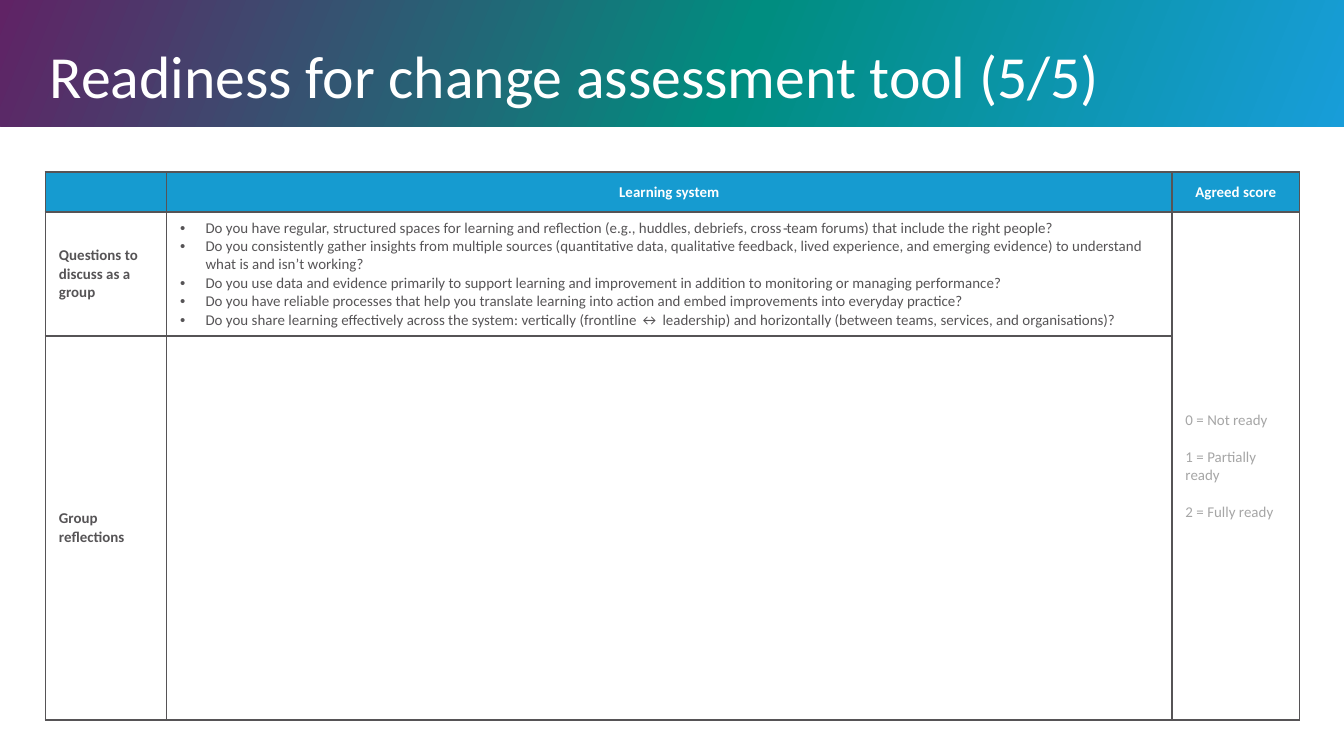
"""Build the learning system page of the readiness for change assessment tool."""
from copy import deepcopy

from lxml import etree
from pptx import Presentation
from pptx.dml import color as dml
from pptx.enum import shapes, text
from pptx.oxml import ns
from pptx.util import Cm, Pt

COLORS = {"purple": "602365", "green": "008D80", "sky": "189DD9", "header": "169BD0",
          "ink": "565456", "hint": "A6A6A6", "white": "FFFFFF"}
QUESTIONS = [
    "Do you have regular, structured spaces for learning and reflection (e.g., huddles, debriefs, cross‑team forums) that include the right people?",
    "Do you consistently gather insights from multiple sources (quantitative data, qualitative feedback, lived experience, and emerging evidence) to understand what is and isn’t working?",
    "Do you use data and evidence primarily to support learning and improvement in addition to monitoring or managing performance?",
    "Do you have reliable processes that help you translate learning into action and embed improvements into everyday practice?",
    "Do you share learning effectively across the system: vertically (frontline ↔ leadership) and horizontally (between teams, services, and organisations)?",
]
SCORES = ["0 = Not ready", "1 = Partially ready", "2 = Fully ready"]


def add_text(paragraph, words, size, color, bold=False):
    run = paragraph.add_run()
    run.text = words
    run.font.name = "Calibri"
    run.font.size = Pt(size)
    run.font.bold = bold
    run.font.color.rgb = dml.RGBColor.from_string(COLORS[color])


def add_borders(cell):
    properties = cell._tc.get_or_add_tcPr()
    for side in ("lnL", "lnR", "lnT", "lnB"):
        line = etree.SubElement(properties, ns.qn(f"a:{side}"), w=str(Pt(1)))
        solid = etree.SubElement(line, ns.qn("a:solidFill"))
        etree.SubElement(solid, ns.qn("a:srgbClr"), val=COLORS["ink"])


deck = Presentation()
deck.slide_width, deck.slide_height = Cm(25.4), Cm(14.29)
slide = deck.slides.add_slide(deck.slide_layouts[5])

band = slide.shapes.add_shape(shapes.MSO_SHAPE.RECTANGLE, 0, 0, deck.slide_width, Cm(2.39))
slide.shapes._spTree.insert(2, band._element)
band.shadow.inherit = False
band.line.fill.background()
band.fill.gradient()
band.fill.gradient_angle = 338
stop_list = band._element.spPr.find(ns.qn("a:gradFill")).find(ns.qn("a:gsLst"))
stop_list.append(deepcopy(stop_list[-1]))
for stop, (position, name) in zip(band.fill.gradient_stops,
                                  [(0, "purple"), (0.55, "green"), (1, "sky")]):
    stop.position = position
    stop.color.rgb = dml.RGBColor.from_string(COLORS[name])

title = slide.shapes.title
title.left, title.top, title.width, title.height = Cm(0.94), Cm(0.89), Cm(23.57), Cm(1.04)
heading = title.text_frame
heading.margin_left = heading.margin_right = heading.margin_top = heading.margin_bottom = 0
heading.vertical_anchor = text.MSO_ANCHOR.MIDDLE
heading.auto_size = text.MSO_AUTO_SIZE.NONE
heading.paragraphs[0].alignment = text.PP_ALIGN.LEFT
add_text(heading.paragraphs[0], "Readiness for change assessment tool (5/5)", 32, "white")

column_widths = [2.29, 19, 2.41]
row_heights = [0.76, 2.21, 7.26]
assessment = slide.shapes.add_table(3, 3, Cm(0.86), Cm(3.25), Cm(sum(column_widths)),
                                    Cm(sum(row_heights))).table
assessment.first_row = assessment.horz_banding = False
for column, width in zip(assessment.columns, column_widths):
    column.width = Cm(width)
for row, height in zip(assessment.rows, row_heights):
    row.height = Cm(height)
assessment.cell(1, 2).merge(assessment.cell(2, 2))

contents = [
    [[], ["Learning system"], ["Agreed score"]],
    [["Questions to discuss as a group"], QUESTIONS, SCORES],
    [["Group reflections"], [], []],
]
for r, row in enumerate(contents):
    for c, lines in enumerate(row):
        cell = assessment.cell(r, c)
        add_borders(cell)
        if r == 0:
            cell.fill.solid()
            cell.fill.fore_color.rgb = dml.RGBColor.from_string(COLORS["header"])
        else:
            cell.fill.background()
        cell.vertical_anchor = text.MSO_ANCHOR.MIDDLE
        color = "white" if r == 0 else "hint" if c == 2 else "ink"
        for i, words in enumerate(lines):
            paragraph = cell.text_frame.paragraphs[0] if i == 0 else cell.text_frame.add_paragraph()
            if r == 0:
                paragraph.alignment = text.PP_ALIGN.CENTER
            elif lines is QUESTIONS:
                layout = paragraph._p.get_or_add_pPr()
                layout.set("marL", str(Cm(0.48)))
                layout.set("indent", str(Cm(-0.48)))
                etree.SubElement(layout, ns.qn("a:buFont"), typeface="Arial")
                etree.SubElement(layout, ns.qn("a:buChar"), char="•")
            elif lines is SCORES and i:
                paragraph.space_before = Pt(9.8)
            add_text(paragraph, words, 8, color, bold=r == 0 or c == 0)
        if not lines:
            etree.SubElement(cell.text_frame.paragraphs[0]._p, ns.qn("a:endParaRPr"), sz="800")

deck.save("out.pptx")
